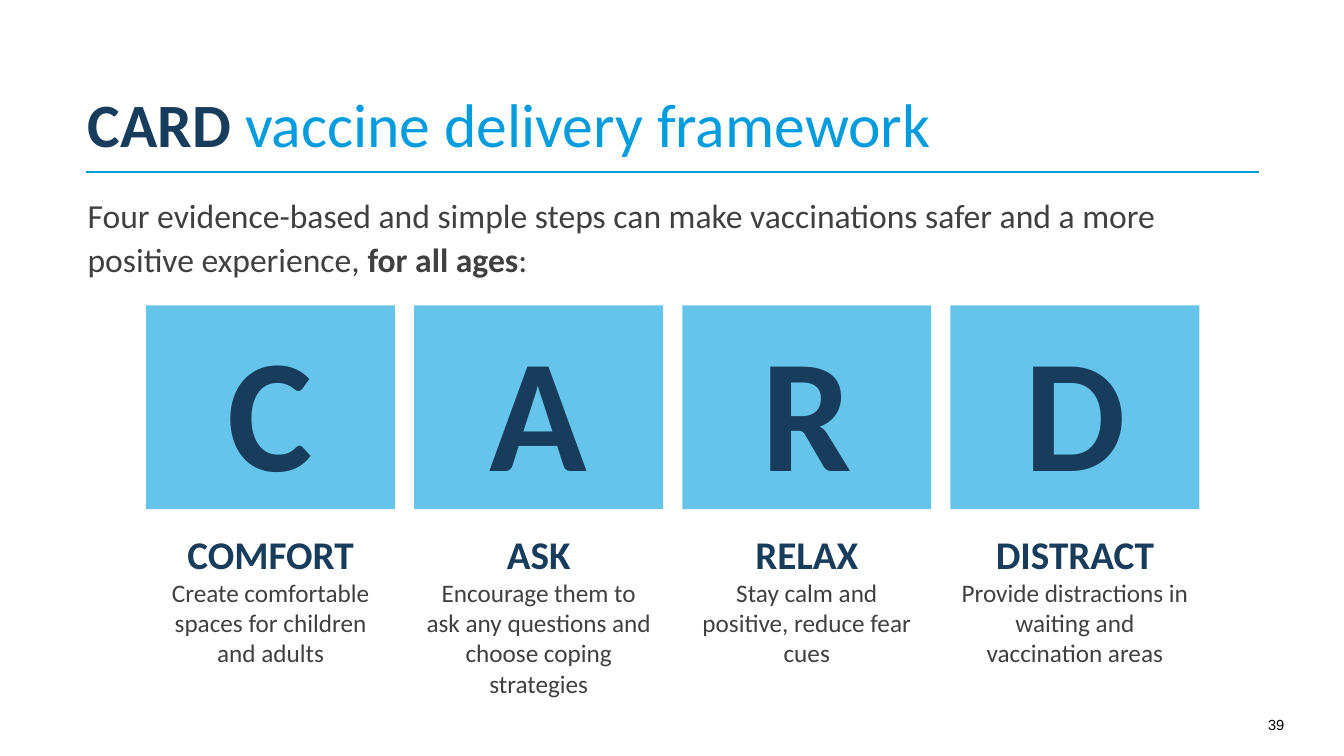
from lxml import etree
from pptx import Presentation
from pptx.dml.color import RGBColor
from pptx.enum.shapes import MSO_CONNECTOR, MSO_SHAPE
from pptx.enum.text import MSO_ANCHOR, PP_ALIGN
from pptx.oxml.ns import qn
from pptx.util import Pt

STRAIGHT = MSO_CONNECTOR.STRAIGHT
RECTANGLE = MSO_SHAPE.RECTANGLE
TOP, MIDDLE, BOTTOM = MSO_ANCHOR.TOP, MSO_ANCHOR.MIDDLE, MSO_ANCHOR.BOTTOM
LEFT, CENTER, RIGHT = PP_ALIGN.LEFT, PP_ALIGN.CENTER, PP_ALIGN.RIGHT

COLORS = {
    "navy": "183C5C",
    "blue": "009CDE",
    "sky": "66C4EB",
    "gray": "404040",
    "black": "000000",
}
DEFAULT_INSETS = (7.2, 3.6, 7.2, 3.6)
CARD_LEFT, CARD_TOP = 104.4, 218.2
CARD_WIDTH, CARD_HEIGHT = 177.8, 145.4
CARD_STEP = 191.5
LABEL_TOP = 375.1

CARDS = [
    ("COMFORT", "Create comfortable spaces for children and adults"),
    ("ASK", "Encourage them to ask any questions and choose coping strategies"),
    ("RELAX", "Stay calm and positive, reduce fear cues"),
    ("DISTRACT", "Provide distractions in waiting and vaccination areas"),
]


def color(name):
    return RGBColor.from_string(COLORS[name])


def add_run(p, text, size, color_name, bold=False, font="Calibri"):
    r = p.add_run()
    r.text = text
    r.font.name = font
    r.font.size = Pt(size)
    r.font.bold = bold
    r.font.color.rgb = color(color_name)


def set_frame(tf, anchor=TOP, insets=DEFAULT_INSETS):
    tf.word_wrap = True
    tf.vertical_anchor = anchor
    tf.margin_left, tf.margin_top, tf.margin_right, tf.margin_bottom = map(Pt, insets)


def add_text(slide, box, paragraphs, align=LEFT, anchor=TOP, insets=DEFAULT_INSETS):
    tf = slide.shapes.add_textbox(*map(Pt, box)).text_frame
    set_frame(tf, anchor, insets)
    for i, runs in enumerate(paragraphs):
        p = tf.add_paragraph() if i else tf.paragraphs[0]
        p.alignment = align
        for run in runs:
            add_run(p, *run)
    return tf


def add_rule(slide, left, right, y):
    line = slide.shapes.add_connector(STRAIGHT, Pt(left), Pt(y), Pt(right), Pt(y))
    line.line.color.rgb = color("blue")
    line.line.width = Pt(1.5)
    etree.SubElement(line._element.spPr, qn("a:effectLst"))


def add_card(slide, left, letter):
    sp = slide.shapes.add_shape(
        RECTANGLE, Pt(left), Pt(CARD_TOP), Pt(CARD_WIDTH), Pt(CARD_HEIGHT))
    sp.shadow.inherit = False
    sp.fill.solid()
    sp.fill.fore_color.rgb = color("sky")
    sp.line.fill.background()
    set_frame(sp.text_frame, MIDDLE)
    p = sp.text_frame.paragraphs[0]
    p.alignment = CENTER
    add_run(p, letter, 115, "navy", True)


def add_label(slide, left, heading, detail):
    add_text(slide, (left, LABEL_TOP, CARD_WIDTH, 106.6),
             [[(heading, 28, "navy", True)], [(detail, 18, "gray")]], CENTER)


def main():
    prs = Presentation()
    prs.slide_width, prs.slide_height = Pt(960), Pt(540)
    slide = prs.slides.add_slide(prs.slide_layouts[6])

    title = add_text(slide, (61.2, 72, 707.8, 43.2),
                     [[("CARD", 44, "navy", True),
                       (" vaccine delivery framework", 44, "blue")]],
                     anchor=BOTTOM, insets=(1.4, 0, 28.1, 0))
    title.paragraphs[0].line_spacing = 0.9
    add_rule(slide, 61.2, 899.3, 123.1)

    intro = add_text(slide, (61.2, 136.1, 838.1, 69.1),
                     [[("Four evidence-based and simple steps can make vaccinations "
                        "safer and a more positive experience, ", 24, "gray"),
                       ("for all ages", 24, "gray", True),
                       (":", 24, "gray")]],
                     insets=(1.4, 0, 1.4, 0))
    intro.paragraphs[0].line_spacing = 1.1
    intro.paragraphs[0].space_after = Pt(6)

    for i, (heading, detail) in enumerate(CARDS):
        left = CARD_LEFT + i * CARD_STEP
        add_card(slide, left, heading[0])
        add_label(slide, left, heading, detail)

    add_text(slide, (860.4, 507.6, 64.1, 20.9),
             [[("39", 10.5, "black", False, "Arial")]], RIGHT)
    prs.save("out.pptx")


if __name__ == "__main__":
    main()
